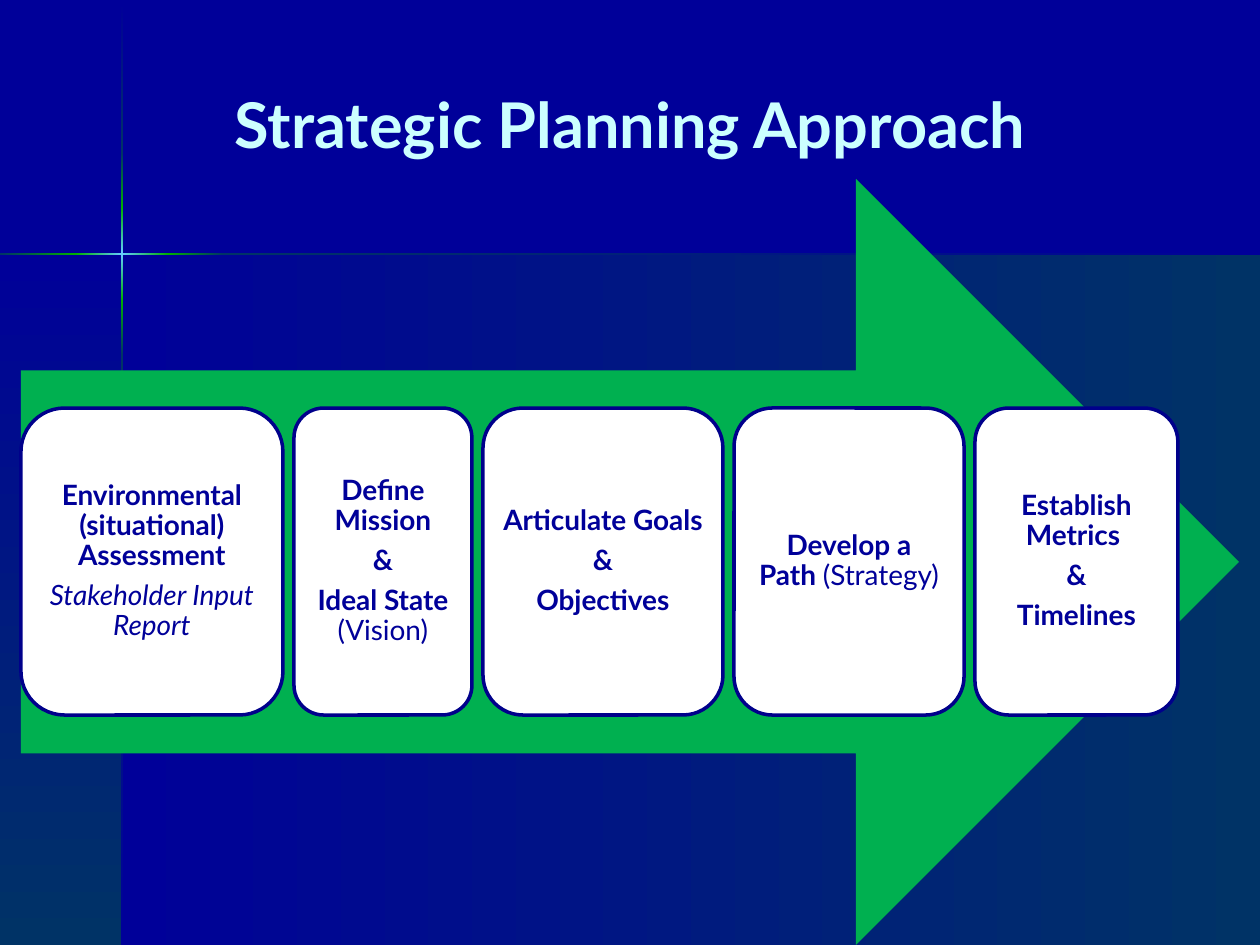
from lxml import etree
from pptx import Presentation
from pptx import util as u
from pptx.dml.color import RGBColor
from pptx.enum import shapes, text

NAVY, TEAL, GREEN, GLOW = "000099", "003366", "00B000", "66CCFF"
WIDTH, HEIGHT = 1260, 945
FONT = "Lato"
TITLE = "Strategic Planning Approach"
PANELS = [((122, 255, 1138, 690), 0), ((0, 255, 122, 690), 270)]
VERTICAL_BEAM = [(1, NAVY), (153, TEAL), (208, GREEN), (254, GLOW),
                 (300, GREEN), (355, TEAL), (945, NAVY)]
HORIZONTAL_BEAM = [(0, TEAL), (76, GREEN), (122, GLOW), (168, GREEN),
                   (223, TEAL), (1260, NAVY)]
BEAM_X, BEAM_Y, BEAM_SIZE = 121, 253, 2
ARROW = (21, 179, 1218, 766)
CARD_LEFT, CARD_TOP, CARD_HEIGHT, CARD_GAP = 21, 408, 307, 11
BOLD, PLAIN, ITALIC = (True, False), (False, False), (False, True)
CARDS = [
    (262, 8, [[("Environmental (situational) Assessment", BOLD)],
              [("Stakeholder Input Report", ITALIC)]]),
    (178, 9, [[("Define Mission", BOLD)], [("&", BOLD)],
              [("Ideal State ", BOLD), ("(Vision)", PLAIN)]]),
    (240, 7, [[("Articulate Goals", BOLD)], [("&", BOLD)], [("Objectives", BOLD)]]),
    (230, 12, [[("Develop a Path ", BOLD), ("(Strategy)", PLAIN)]]),
    (203, 6, [[("Establish Metrics ", BOLD)], [("&", BOLD)], [("Timelines", BOLD)]]),
]


def px(value):
    """Turn pixels into EMU."""
    return round(value * 914400 / 126)


def color(value):
    """Turn a hex string into a colour."""
    return RGBColor.from_string(value)


def add_shape(slide, kind, box):
    """Add a preset shape without shadow or outline."""
    shape = slide.shapes.add_shape(kind, *map(px, box))
    shape.shadow.inherit = False
    shape.line.fill.background()
    return shape


def add_gradient(slide, box, start, end, angle):
    """Add a rectangle that blends between two colours."""
    fill = add_shape(slide, shapes.MSO_SHAPE.RECTANGLE, box).fill
    fill.gradient()
    fill.gradient_angle = angle
    for stop, value in zip(fill.gradient_stops, (start, end)):
        stop.color.rgb = color(value)


def add_beam(slide, stops, vertical):
    """Add a thin light beam from a chain of colour stops."""
    for (start, first), (end, last) in zip(stops, stops[1:]):
        if vertical:
            box = (BEAM_X, start, BEAM_SIZE, end - start)
        else:
            box = (start, BEAM_Y, end - start, BEAM_SIZE)
        add_gradient(slide, box, first, last, 270 if vertical else 0)


def style(run, size, value, bold, italic=False):
    """Format one run."""
    run.font.name = FONT
    run.font.size = u.Pt(size)
    run.font.bold = bold
    run.font.italic = italic
    run.font.color.rgb = color(value)


def add_title(slide):
    """Add the centred title."""
    frame = slide.shapes.add_textbox(*map(px, (139, 73, 982, 101))).text_frame
    frame.word_wrap = True
    frame.vertical_anchor = text.MSO_ANCHOR.MIDDLE
    frame.text = TITLE
    paragraph = frame.paragraphs[0]
    paragraph.alignment = text.PP_ALIGN.CENTER
    style(paragraph.runs[0], 36, "CCFFFF", True)


def add_card(slide, left, width, inset, paragraphs):
    """Add one step card with its text."""
    box = (left, CARD_TOP, width, CARD_HEIGHT)
    shape = add_shape(slide, shapes.MSO_SHAPE.ROUNDED_RECTANGLE, box)
    shape.fill.solid()
    shape.fill.fore_color.rgb = color("FFFFFF")
    shape.line.color.rgb = color("00008B")
    shape.line.width = u.Pt(2)
    frame = shape.text_frame
    frame.word_wrap = True
    frame.vertical_anchor = text.MSO_ANCHOR.MIDDLE
    frame.margin_left = frame.margin_right = px(inset)
    frame.margin_top = frame.margin_bottom = px(inset)
    for index, parts in enumerate(paragraphs):
        paragraph = frame.add_paragraph() if index else frame.paragraphs[0]
        paragraph.alignment = text.PP_ALIGN.CENTER
        paragraph.line_spacing = 0.9
        paragraph.space_after = u.Pt(5.6)
        for words, (bold, italic) in parts:
            run = paragraph.add_run()
            run.text = words
            style(run, 16, NAVY, bold, italic)


def main():
    """Build the slide."""
    presentation = Presentation()
    presentation.slide_width, presentation.slide_height = px(WIDTH), px(HEIGHT)
    slide = presentation.slides.add_slide(presentation.slide_layouts[6])
    slide.background.fill.solid()
    slide.background.fill.fore_color.rgb = color(NAVY)
    for box, angle in PANELS:
        add_gradient(slide, box, NAVY, TEAL, angle)
    add_beam(slide, VERTICAL_BEAM, True)
    add_beam(slide, HORIZONTAL_BEAM, False)
    add_title(slide)
    arrow = add_shape(slide, shapes.MSO_SHAPE.RIGHT_ARROW, ARROW)
    arrow.fill.solid()
    arrow.fill.fore_color.rgb = color("00B050")
    left = CARD_LEFT
    for width, inset, paragraphs in CARDS:
        add_card(slide, left, width, inset, paragraphs)
        left += width + CARD_GAP
    presentation.save("out.pptx")


if __name__ == "__main__":
    main()
